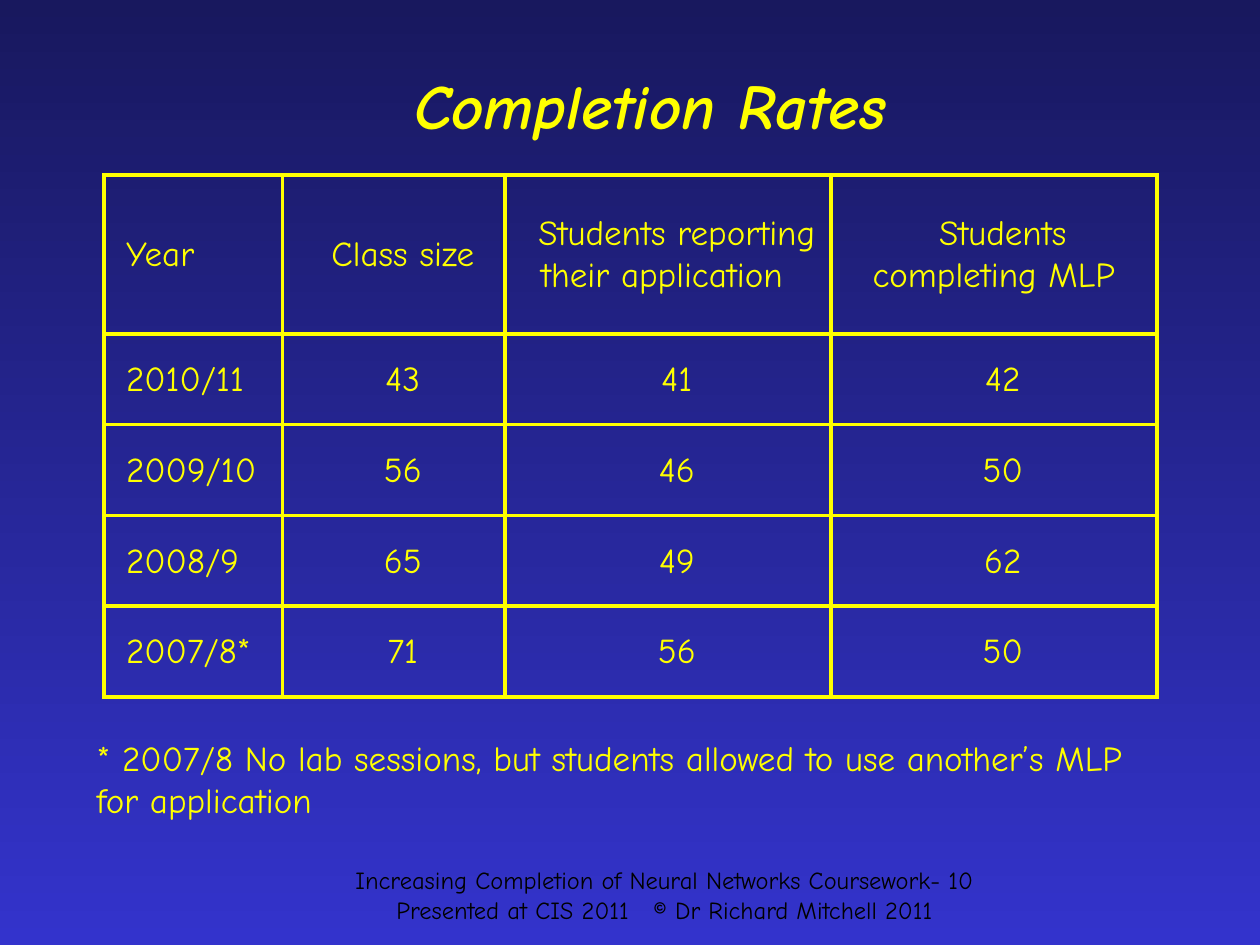
from dataclasses import dataclass

from lxml.etree import SubElement
from pptx import Presentation
from pptx.dml.color import RGBColor
from pptx.enum.text import MSO_ANCHOR, MSO_AUTO_SIZE, PP_ALIGN
from pptx.oxml.ns import qn
from pptx.util import Cm, Pt

YELLOW = RGBColor(0xFF, 0xFF, 0x00)
BLACK = RGBColor(0x00, 0x00, 0x00)
NIGHT_BLUE = RGBColor(0x18, 0x18, 0x5E)
BRIGHT_BLUE = RGBColor(0x33, 0x33, 0xCC)
FONT_NAME = "Comic Neue"

TITLE_FORMAT = {"size": Pt(36), "bold": True, "italic": True}
BODY_FORMAT = {"size": Pt(20)}
FOOTER_FORMAT = {"size": Pt(14)}

COLUMN_WIDTHS = [3.6, 4.48, 6.57, 6.57]
HEADER_HEIGHT = 3.2
ROW_HEIGHT = 1.83
ROWS = [
    ("Year", "Class size", "Students reporting their application ",
     "Students completing MLP"),
    ("2010/11", "43", "41", "42"),
    ("2009/10", "56", "46", "50"),
    ("2008/9", "65", "49", "62"),
    ("2007/8*", "71", "56", "50"),
]


@dataclass
class TextBlock:
    lines: list[str]
    left: float
    top: float
    width: float
    height: float
    format: dict
    color: RGBColor = YELLOW
    alignment: PP_ALIGN = PP_ALIGN.CENTER
    anchor: MSO_ANCHOR = MSO_ANCHOR.TOP
    auto_size: MSO_AUTO_SIZE = MSO_AUTO_SIZE.NONE


TEXT_BLOCKS = [
    TextBlock(["Completion Rates"], 1.5, 0.91, 23.22, 2.39, TITLE_FORMAT,
              anchor=MSO_ANCHOR.MIDDLE),
    TextBlock(["Increasing Completion of Neural Networks Coursework- 10",
               "Presented at CIS 2011   © Dr Richard Mitchell 2011"],
              6.3, 17.32, 14.2, 1.27, FOOTER_FORMAT, BLACK),
    TextBlock(["* 2007/8 No lab sessions, but students allowed to use "
               "another’s MLP for application"],
              1.7, 14.73, 22, 1.96, BODY_FORMAT, alignment=PP_ALIGN.LEFT,
              auto_size=MSO_AUTO_SIZE.SHAPE_TO_FIT_TEXT),
]


def write_span(para, text: str, values: dict, color: RGBColor) -> None:
    span = para.add_run()
    span.text = text
    for name, value in {"name": FONT_NAME, **values}.items():
        setattr(span.font, name, value)
    span.font.color.rgb = color


def draw_text(page, block: TextBlock) -> None:
    box = page.shapes.add_textbox(Cm(block.left), Cm(block.top),
                                  Cm(block.width), Cm(block.height))
    frame = box.text_frame
    frame.word_wrap = True
    frame.auto_size = block.auto_size
    frame.vertical_anchor = block.anchor
    for index, line in enumerate(block.lines):
        para = frame.add_paragraph() if index else frame.paragraphs[0]
        para.alignment = block.alignment
        write_span(para, line, block.format, block.color)


def draw_borders(cell) -> None:
    properties = cell._tc.get_or_add_tcPr()
    for side in ("a:lnL", "a:lnR", "a:lnT", "a:lnB"):
        line = SubElement(properties, qn(side), w=str(Pt(2.25)))
        fill = SubElement(line, qn("a:solidFill"))
        SubElement(fill, qn("a:srgbClr"), val=str(YELLOW))


def fill_cell(cell, text: str, alignment: PP_ALIGN) -> None:
    draw_borders(cell)
    cell.fill.background()
    cell.vertical_anchor = MSO_ANCHOR.MIDDLE
    cell.margin_left = cell.margin_right = Cm(0.08)
    cell.margin_top = cell.margin_bottom = 0
    para = cell.text_frame.paragraphs[0]
    para.alignment = alignment
    para.line_spacing = 1.05
    para_properties = para._p.get_or_add_pPr()
    para_properties.set("marL", "0")
    para_properties.set("indent", str(Cm(0.36)))
    write_span(para, text, BODY_FORMAT, YELLOW)


def draw_table(page, left: float, top: float) -> None:
    heights = [HEADER_HEIGHT] + [ROW_HEIGHT] * (len(ROWS) - 1)
    table = page.shapes.add_table(
        len(ROWS), len(COLUMN_WIDTHS), Cm(left), Cm(top),
        Cm(sum(COLUMN_WIDTHS)), Cm(sum(heights))).table
    table.first_row = table.horz_banding = False
    for column, width in zip(table.columns, COLUMN_WIDTHS):
        column.width = Cm(width)
    for row, height, texts in zip(table.rows, heights, ROWS):
        row.height = Cm(height)
        for index, (cell, text) in enumerate(zip(row.cells, texts)):
            fill_cell(cell, text, PP_ALIGN.CENTER if index else PP_ALIGN.JUSTIFY)


def main() -> None:
    deck = Presentation()
    deck.slide_width, deck.slide_height = Cm(25.4), Cm(19.05)
    page = deck.slides.add_slide(deck.slide_layouts[6])

    # Background, dark at the top
    background = page.background.fill
    background.gradient()
    background.gradient_angle = 270
    for stop, color in zip(background.gradient_stops, (NIGHT_BLUE, BRIGHT_BLUE)):
        stop.color.rgb = color

    # Title, footer and note, then the completion table
    for block in TEXT_BLOCKS:
        draw_text(page, block)
    draw_table(page, 2.1, 3.53)

    deck.save("out.pptx")


if __name__ == "__main__":
    main()
